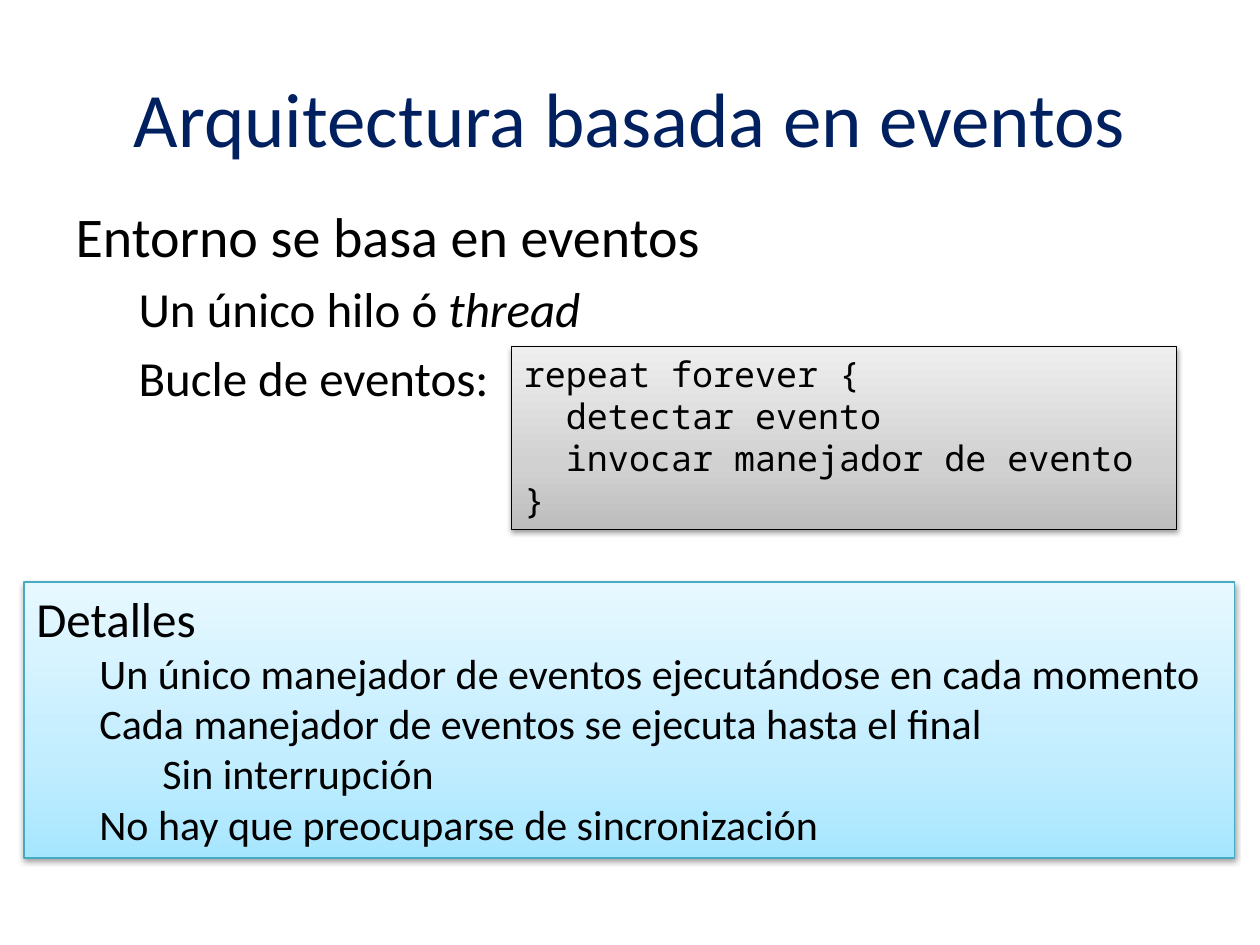
"""Build the slide on event-based architecture."""
from copy import deepcopy
from dataclasses import dataclass

from lxml import etree
from pptx import Presentation
from pptx.dml.color import RGBColor
from pptx.enum.shapes import MSO_SHAPE
from pptx.enum.text import MSO_ANCHOR, MSO_AUTO_SIZE, PP_ALIGN
from pptx.oxml.ns import qn
from pptx.util import Inches, Pt

RECTANGLE = MSO_SHAPE.RECTANGLE
TOP = MSO_ANCHOR.TOP
FIT_SHAPE, NO_FIT = MSO_AUTO_SIZE.SHAPE_TO_FIT_TEXT, MSO_AUTO_SIZE.NONE
LEFT, CENTER = PP_ALIGN.LEFT, PP_ALIGN.CENTER


@dataclass(frozen=True)
class Theme:
    font: str = "Calibri"
    code_font: str = "Noto Sans Mono"
    title: str = "002060"
    text: str = "000000"
    shadow: str = "000000"
    gray: tuple = ("BDBDBD", "D1D1D1", "EEEEEE")
    gray_line: str = "000000"
    blue: tuple = ("A7E6FF", "C1EDFF", "E7F8FF")
    blue_line: str = "46AAC5"
    title_size: int = 44
    topic_size: int = 32
    point_size: int = 28
    detail_size: int = 24
    code_size: int = 20


theme = Theme()


def write(frame, lines, font=theme.font, color=theme.text, align=LEFT):
    for index, (level, size, *pieces) in enumerate(lines):
        paragraph = frame.paragraphs[0] if index == 0 else frame.add_paragraph()
        paragraph.level = level
        paragraph.alignment = align
        properties = paragraph._p.get_or_add_pPr()
        properties.set("marL", str(Inches(0.5 * level)))
        properties.set("indent", "0")
        etree.SubElement(properties, qn("a:buNone"))
        for position, piece in enumerate(pieces):
            run = paragraph.add_run()
            run.text = piece
            run.font.name = font
            run.font.size = Pt(size)
            run.font.color.rgb = RGBColor.from_string(color)
            run.font.italic = position == 1


def add_panel(slide, box, stops, line):
    panel = slide.shapes.add_shape(RECTANGLE, *map(Inches, box))
    panel.fill.gradient()
    panel.fill.gradient_angle = 90
    stop_list = panel._element.spPr.find(".//" + qn("a:gsLst"))
    stop_list.insert(1, deepcopy(stop_list[0]))
    for stop, place, color in zip(panel.fill.gradient_stops, (0, 0.35, 1), stops):
        stop.position = place
        stop.color.rgb = RGBColor.from_string(color)
    panel.line.color.rgb = RGBColor.from_string(line)
    panel.line.width = Pt(0.75)
    panel.shadow.inherit = False
    effects = panel._element.spPr.find(qn("a:effectLst"))
    shadow = etree.SubElement(effects, qn("a:outerShdw"), blurRad=str(Pt(3.1)),
                              dist=str(Pt(1.6)), dir="5400000", rotWithShape="0")
    shade = etree.SubElement(shadow, qn("a:srgbClr"), val=theme.shadow)
    etree.SubElement(shade, qn("a:alpha"), val="38000")
    frame = panel.text_frame
    frame.word_wrap = True
    frame.auto_size = FIT_SHAPE
    frame.vertical_anchor = TOP
    return frame


deck = Presentation()
deck.slide_width, deck.slide_height = Inches(10), Inches(7.5)
slide = deck.slides.add_slide(deck.slide_layouts[1])

title, body = slide.placeholders
for holder, top, height in ((title, 0.3, 1.25), (body, 1.55, 2.39)):
    holder.left, holder.top = Inches(0.5), Inches(top)
    holder.width, holder.height = Inches(9), Inches(height)
    holder.text_frame.auto_size = NO_FIT

write(title.text_frame, [(0, theme.title_size, "Arquitectura basada en eventos")],
      color=theme.title, align=CENTER)
write(body.text_frame, [
    (0, theme.topic_size, "Entorno se basa en eventos"),
    (1, theme.point_size, "Un único hilo ó ", "thread"),
    (1, theme.point_size, "Bucle de eventos:"),
])

event_loop = add_panel(slide, (4.06, 2.75, 5.28, 1.45), theme.gray, theme.gray_line)
loop_code = ("repeat forever {", "  detectar evento",
             "  invocar manejador de evento", "}")
write(event_loop, [(0, theme.code_size, line) for line in loop_code],
      font=theme.code_font)

details = add_panel(slide, (0.19, 4.62, 9.61, 2.19), theme.blue, theme.blue_line)
write(details, [
    (0, theme.point_size, "Detalles"),
    (1, theme.detail_size,
     "Un único manejador de eventos ejecutándose en cada momento"),
    (1, theme.detail_size, "Cada manejador de eventos se ejecuta hasta el final"),
    (2, theme.detail_size, "Sin interrupción"),
    (1, theme.detail_size, "No hay que preocuparse de sincronización"),
])

deck.save("out.pptx")
